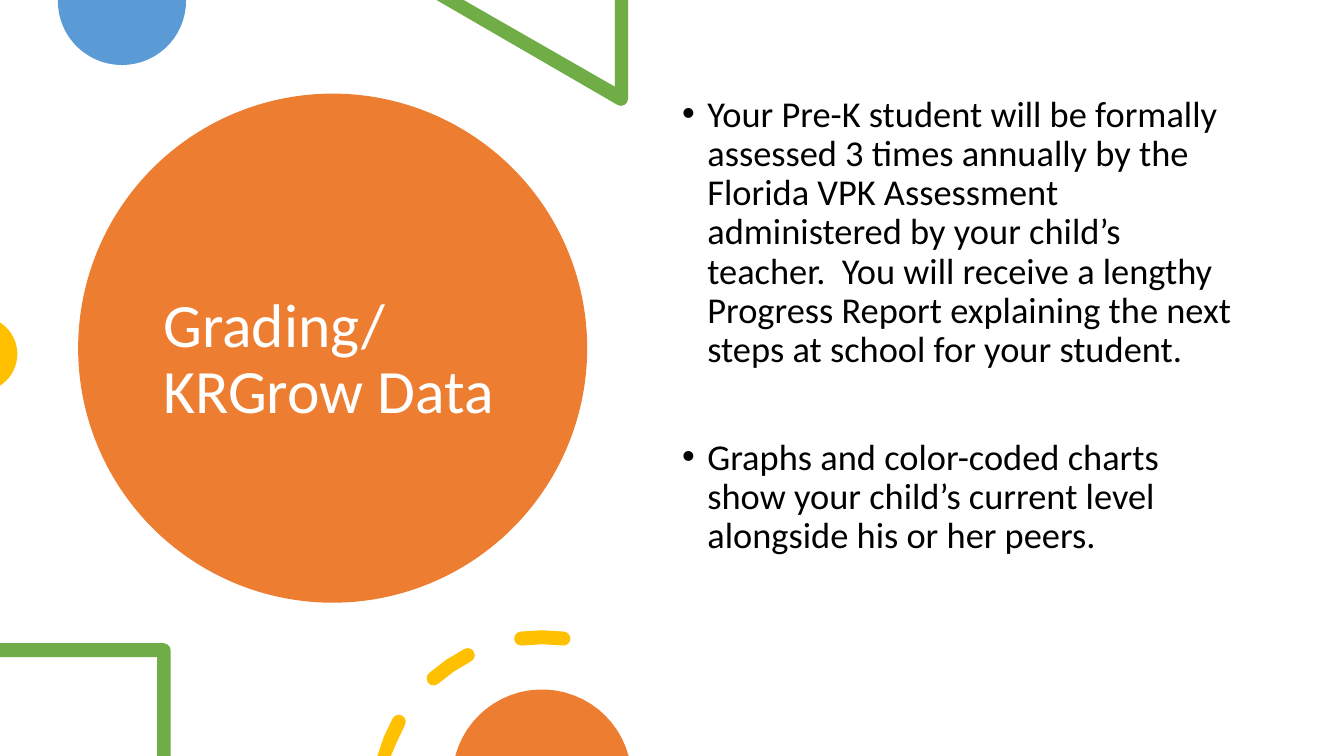
from dataclasses import dataclass
from math import cos, radians, sin

from lxml.etree import SubElement
from pptx import Presentation
from pptx.dml.color import RGBColor
from pptx.enum.shapes import MSO_SHAPE
from pptx.enum.text import MSO_ANCHOR, MSO_AUTO_SIZE, PP_ALIGN
from pptx.oxml.ns import qn
from pptx.util import Pt

COLORS = {
    "orange": "ED7D31",
    "blue": "5B9BD5",
    "green": "70AD47",
    "yellow": "FFC000",
    "white": "FFFFFF",
    "black": "000000",
}
FONT = "Calibri"
WIDTH, HEIGHT = 960, 540
BAND = 10  # thickness of the yellow dashes
CORNER = 5  # radius of the rounded green corners

TITLE_LINES = ["Grading/", "KRGrow Data"]

Point = tuple[float, float]


@dataclass
class Ornament:
    color: str
    contours: list[list[Point]]


@dataclass
class Bullet:
    text: str
    space_before: float


BULLETS = [
    Bullet(
        "Your Pre-K student will be formally assessed 3 times annually by the "
        "Florida VPK Assessment administered by your child’s teacher.  You will "
        "receive a lengthy Progress Report explaining the next steps at school "
        "for your student.",
        10,
    ),
    Bullet(
        "Graphs and color-coded charts show your child’s current level "
        "alongside his or her peers.",
        48.5,
    ),
]


def arc(center: Point, radius: float, start: float, end: float) -> list[Point]:
    """Points from start to end (clockwise degrees), held within the slide."""
    step = 6 if radius > CORNER else 30
    steps = max(1, round(abs(end - start) / step))
    angles = [radians(start + (end - start) * i / steps) for i in range(steps + 1)]
    return [
        (
            min(max(center[0] + radius * cos(angle), 0), WIDTH),
            min(max(center[1] + radius * sin(angle), 0), HEIGHT),
        )
        for angle in angles
    ]


def dash(center: Point, radius: float, start: float, end: float) -> list[Point]:
    """A round-capped piece of a ring."""

    def cap(angle: float, first: float) -> list[Point]:
        middle = (
            center[0] + radius * cos(radians(angle)),
            center[1] + radius * sin(radians(angle)),
        )
        return arc(middle, BAND / 2, first, first + 180)

    return (
        arc(center, radius + BAND / 2, start, end)
        + cap(end, end)
        + arc(center, radius - BAND / 2, end, start)
        + cap(start, start + 180)
    )


RING_CENTER, RING_RADIUS = (387.4, 572.4), 117.2
DASH_ANGLES = [(195.4, 209), (228.5, 243), (262.6, 277.4)]

ORNAMENTS = [
    Ornament("blue", [arc((87.1, 0.7), 45.8, -1, 181)]),
    Ornament(
        "green",
        [
            [(448.6, 0), *arc((443.6, 70.6), CORNER, 0, 120),
             (311.8, 0), (331.2, 0), (439.2, 61.9), (439.2, 0)]
        ],
    ),
    Ornament("yellow", [arc((-14.4, 252.9), 26.8, -57.5, 57.5)]),
    Ornament(
        "green",
        [
            [(0, 459.4), *arc((116.9, 464.4), CORNER, -90, 0),
             (121.9, 540), (112.3, 540), (112.3, 469.4), (0, 469.4)]
        ],
    ),
    Ornament(
        "yellow",
        [dash(RING_CENTER, RING_RADIUS, start, end) for start, end in DASH_ANGLES],
    ),
    Ornament("orange", [arc((387.1, 556.6), 64.1, 195, 345)]),
]


def paint(shape, color: str) -> None:
    shape.shadow.inherit = False
    shape.fill.solid()
    shape.fill.fore_color.rgb = RGBColor.from_string(COLORS[color])
    shape.line.fill.background()


def draw_ornament(slide, ornament: Ornament) -> None:
    contours = [[(Pt(x), Pt(y)) for x, y in points] for points in ornament.contours]
    builder = slide.shapes.build_freeform(*contours[0][0], scale=1.0)
    builder.add_line_segments(contours[0][1:], close=True)
    for contour in contours[1:]:
        builder.move_to(*contour[0])
        builder.add_line_segments(contour[1:], close=True)
    paint(builder.convert_to_shape(), ornament.color)


def add_run(paragraph, text: str, size: float, color: str) -> None:
    run = paragraph.add_run()
    run.text = text
    run.font.name = FONT
    run.font.size = Pt(size)
    run.font.color.rgb = RGBColor.from_string(COLORS[color])


def draw_title(slide) -> None:
    title = slide.shapes.title
    title.left, title.top, title.width, title.height = map(Pt, (109.4, 97.2, 254.9, 320.4))
    circle = slide.shapes.add_shape(MSO_SHAPE.OVAL, *map(Pt, (55.8, 66.9, 363.6, 363.6)))
    paint(circle, "orange")
    title.element.addprevious(circle.element)

    frame = title.text_frame
    frame.word_wrap = True
    frame.auto_size = MSO_AUTO_SIZE.NONE
    frame.vertical_anchor = MSO_ANCHOR.MIDDLE
    paragraph = frame.paragraphs[0]
    paragraph.alignment = PP_ALIGN.LEFT
    paragraph.line_spacing = 0.9
    for index, line in enumerate(TITLE_LINES):
        if index:
            paragraph.add_line_break()
        add_run(paragraph, line, 44, "white")


def draw_bullets(slide) -> None:
    frame = slide.shapes.add_textbox(*map(Pt, (480.2, 64.8, 414, 385.2))).text_frame
    frame.word_wrap = True
    for index, bullet in enumerate(BULLETS):
        paragraph = frame.add_paragraph() if index else frame.paragraphs[0]
        paragraph.line_spacing = 0.9
        paragraph.space_before = Pt(bullet.space_before)
        add_run(paragraph, bullet.text, 26, "black")
        properties = paragraph._p.get_or_add_pPr()
        properties.set("marL", str(Pt(18)))
        properties.set("indent", str(Pt(-18)))
        SubElement(properties, qn("a:buFont")).set("typeface", "Arial")
        SubElement(properties, qn("a:buChar")).set("char", "•")


def main() -> None:
    presentation = Presentation()
    presentation.slide_width, presentation.slide_height = Pt(WIDTH), Pt(HEIGHT)
    slide = presentation.slides.add_slide(presentation.slide_layouts[5])
    draw_title(slide)
    for ornament in ORNAMENTS:
        draw_ornament(slide, ornament)
    draw_bullets(slide)
    presentation.save("out.pptx")


if __name__ == "__main__":
    main()
